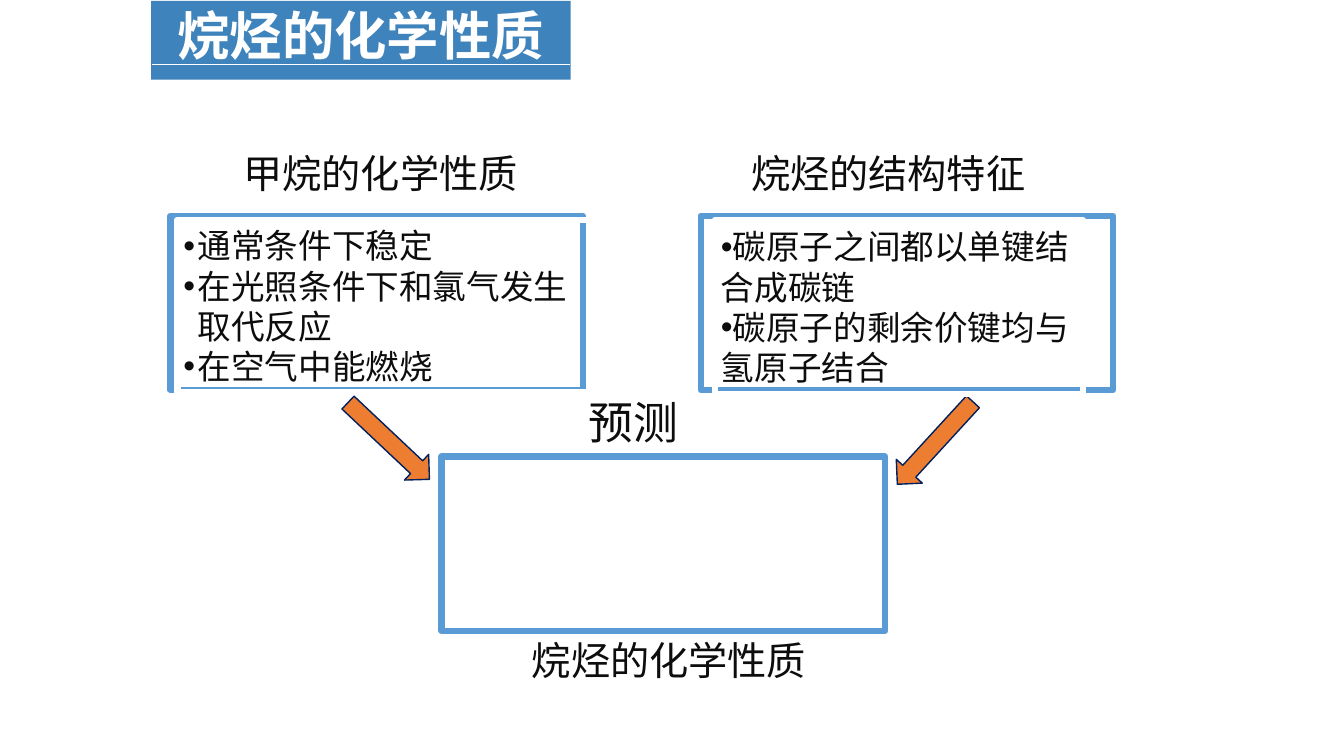
from dataclasses import dataclass

from lxml.etree import SubElement
from pptx import Presentation
from pptx.dml.color import RGBColor
from pptx.enum.shapes import MSO_CONNECTOR, MSO_SHAPE
from pptx.enum.text import MSO_ANCHOR, MSO_AUTO_SIZE, PP_ALIGN
from pptx.oxml.ns import qn
from pptx.util import Inches, Pt


@dataclass(frozen=True)
class Theme:
    font: str = "Noto Sans CJK SC"
    white: str = "FFFFFF"
    ink: str = "0D0D0D"
    banner: str = "3F83BC"
    frame: str = "5B9BD5"
    arrow: str = "ED7D31"
    arrow_edge: str = "002060"
    title_size: float = 37.4
    heading_size: float = 28
    predict_size: float = 32
    list_size: float = 24
    leading: float = 1.2


theme = Theme()


def paint(shape, box, fill=None, line=None, width=1):
    for name, value in zip(("left", "top", "width", "height"), box):
        setattr(shape, name, Inches(value))
    shape.shadow.inherit = False
    if fill:
        shape.fill.solid()
        shape.fill.fore_color.rgb = RGBColor.from_string(fill)
    else:
        shape.fill.background()
    if line:
        shape.line.color.rgb = RGBColor.from_string(line)
        shape.line.width = Pt(width)
    else:
        shape.line.fill.background()


def write(shape, lines, size, color, align, inset=0.06, wrap=True, bold=False):
    frame = shape.text_frame
    frame.text = "\n".join(lines)
    frame_format = {
        "word_wrap": wrap,
        "auto_size": MSO_AUTO_SIZE.NONE,
        "vertical_anchor": MSO_ANCHOR.MIDDLE,
        "margin_left": Inches(inset),
        "margin_right": Inches(inset),
        "margin_top": Inches(0.05),
        "margin_bottom": Inches(0.05),
    }
    for name, value in frame_format.items():
        setattr(frame, name, value)
    paragraph_format = {
        "alignment": align,
        "space_before": Pt(0),
        "space_after": Pt(0),
        "line_spacing": Pt(size * theme.leading),
    }
    for paragraph in frame.paragraphs:
        for name, value in paragraph_format.items():
            setattr(paragraph, name, value)
        for run in paragraph.runs:
            for name, value in {"name": theme.font, "size": Pt(size), "bold": bold}.items():
                setattr(run.font, name, value)
            run.font.color.rgb = RGBColor.from_string(color)
            east_asian = SubElement(run.font._element, qn("a:ea"))
            east_asian.set("typeface", theme.font)


presentation = Presentation()
presentation.slide_width = Inches(13.33)
presentation.slide_height = Inches(7.5)
slide = presentation.slides.add_slide(presentation.slide_layouts[3])
shapes = slide.shapes
title, left_list, right_list = slide.placeholders

banner = shapes.add_shape(MSO_SHAPE.RECTANGLE, 0, 0, 0, 0)
paint(banner, (1.5, 0.01, 4.16, 0.78), fill=theme.banner)
rule = shapes.add_connector(
    MSO_CONNECTOR.STRAIGHT, Inches(1.51), Inches(0.64), Inches(5.65), Inches(0.64)
)
rule.line.color.rgb = RGBColor.from_string(theme.white)
rule.line.width = Pt(0.75)
SubElement(rule.element.spPr, qn("a:effectLst"))

shapes.element.append(title.element)
paint(title, (1.45, -0.02, 4.26, 0.73))
write(title, ["烷烃的化学性质"], theme.title_size, theme.white, PP_ALIGN.CENTER, inset=0.1, bold=True)

labels = [
    ("甲烷的化学性质", theme.heading_size, (2.36, 1.42, 2.83, 0.58)),
    ("烷烃的结构特征", theme.heading_size, (7.38, 1.42, 2.86, 0.58)),
    ("烷烃的化学性质", theme.heading_size, (5.22, 6.26, 2.83, 0.58)),
    ("预测", theme.predict_size, (5.78, 3.86, 1.01, 0.65)),
]
for text, size, box in labels:
    label = shapes.add_textbox(0, 0, 0, 0)
    paint(label, box)
    write(label, [text], size, theme.ink, PP_ALIGN.CENTER, wrap=False)

for left, top, width in [(6.95, 2.14, 4.09), (1.69, 2.14, 4.09), (4.38, 4.53, 4.4)]:
    outline = shapes.add_shape(MSO_SHAPE.RECTANGLE, 0, 0, 0, 0)
    paint(outline, (left, top, width, 1.73), line=theme.frame, width=4.5)

for left, top, angle in [(3.3, 4.2, 43.3), (8.72, 4.22, 132.5)]:
    arrow = shapes.add_shape(MSO_SHAPE.RIGHT_ARROW, 0, 0, 0, 0)
    paint(arrow, (left, top, 1.11, 0.35), fill=theme.arrow, line=theme.arrow_edge)
    arrow.rotation = angle

lists = [
    (
        left_list,
        (1.76, 2.18, 4.09, 1.71),
        0.14,
        ["通常条件下稳定", "在光照条件下和氯气发生取代反应", "在空气中能燃烧"],
    ),
    (
        right_list,
        (7.09, 2.18, 3.65, 1.73),
        0,
        ["碳原子之间都以单键结合成碳链", "碳原子的剩余价键均与氢原子结合"],
    ),
]
for placeholder, box, hanging, lines in lists:
    shapes.element.append(placeholder.element)
    paint(placeholder, box, line=theme.white, width=4.5)
    write(placeholder, lines, theme.list_size, theme.ink, PP_ALIGN.LEFT)
    for paragraph in placeholder.text_frame.paragraphs:
        properties = paragraph._p.get_or_add_pPr()
        properties.set("marL", str(Inches(hanging)))
        properties.set("indent", str(-Inches(hanging)))
        SubElement(properties, qn("a:buChar")).set("char", "•")

presentation.save("out.pptx")
